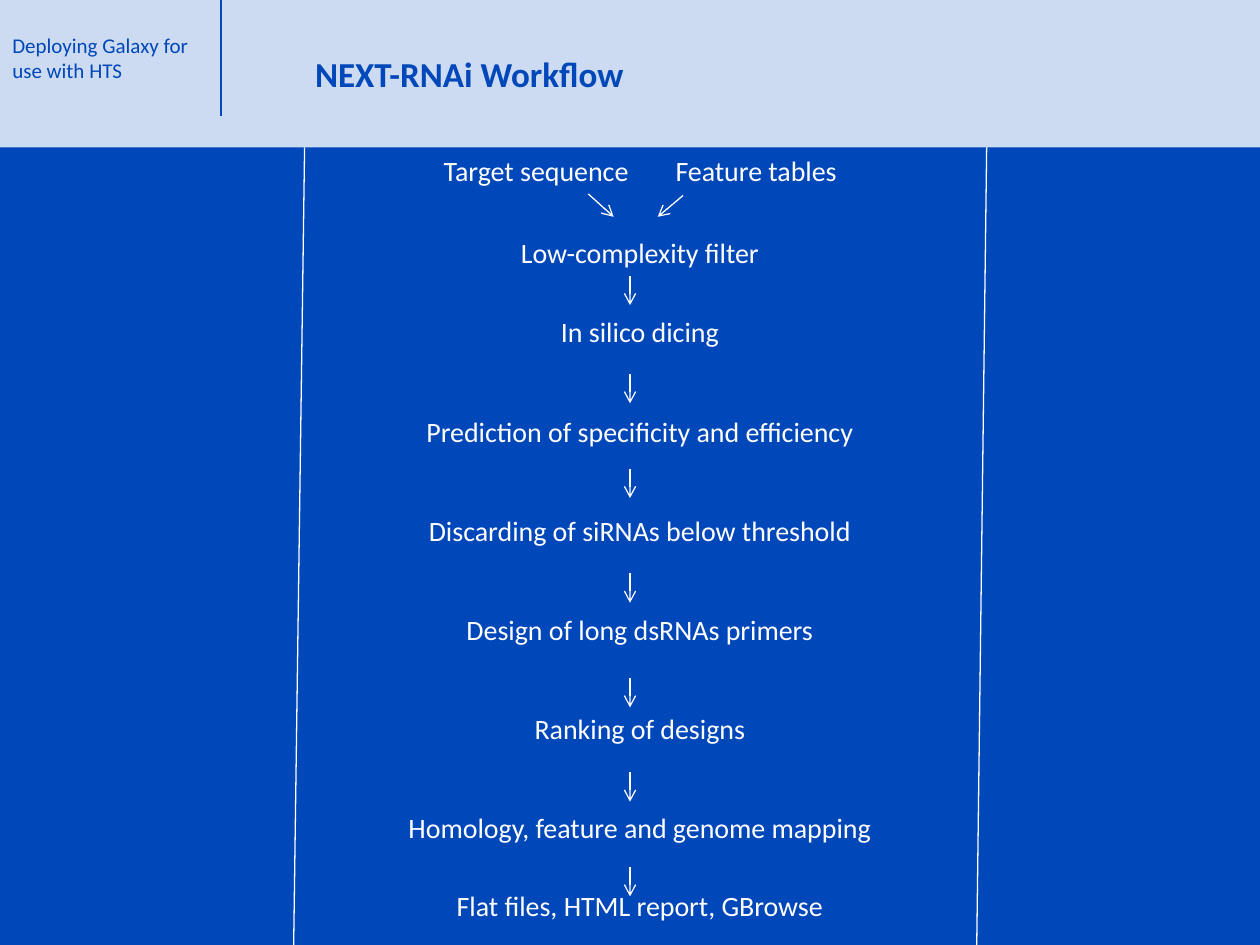
"""Build the NEXT-RNAi workflow slide."""
from pptx import Presentation
from pptx import util as u
from pptx.dml.color import RGBColor
from pptx.enum import shapes, text
from pptx.oxml.ns import qn
from lxml import etree

BLUE, PALE, WHITE = "0047B9", "CCDBF1", "FFFFFF"
WIDTH, HEIGHT = 25.4, 19.05
BODY_TOP, HEADER_HEIGHT = 2.97, 2.74
LABEL_HEIGHT, LABEL_CENTRE, LABEL_WIDTH = 0.94, 12.9, 10.16
FIRST_STEP, STEP_GAP = 6.22, 2
ARROW_X, ARROW_LENGTH = 12.7, 0.59

TITLE = "NEXT-RNAi Workflow"
SIDE_NOTE = "Deploying Galaxy for use with HTS"
INPUTS = [("Target sequence", 8.69, 4.24), ("Feature tables", 13.34, 3.81)]
FILTER, FILTER_TOP = "Low-complexity filter", 4.62
STEPS = [
    "In silico dicing",
    "Prediction of specificity and efficiency",
    "Discarding of siRNAs below threshold",
    "Design of long dsRNAs primers",
    "Ranking of designs",
    "Homology, feature and genome mapping",
]
OUTPUT, OUTPUT_TOP = "Flat files, HTML report, GBrowse", 17.78
ARROW_TOPS = [5.56, 7.54, 9.45, 11.56, 13.67, 15.57, 17.48]
INPUT_ARROWS = [(11.86, 3.91, 12.37, 4.37), (13.77, 3.94, 13.26, 4.37)]
SIDE_LINES = [(6.14, BODY_TOP, 5.92, HEIGHT), (19.89, BODY_TOP, 19.69, HEIGHT)]


def colour(value):
    return RGBColor.from_string(value)


def set_text(sp, words, size, shade, bold=False, inset=0.25, align=text.PP_ALIGN.LEFT,
             anchor=text.MSO_ANCHOR.TOP):
    tf = sp.text_frame
    tf.text = words
    frame = {"word_wrap": True, "auto_size": text.MSO_AUTO_SIZE.NONE, "vertical_anchor": anchor,
             "margin_left": u.Cm(inset), "margin_right": u.Cm(inset),
             "margin_top": u.Cm(0.13), "margin_bottom": u.Cm(0.13)}
    for name, value in frame.items():
        setattr(tf, name, value)
    p = tf.paragraphs[0]
    p.alignment = align
    font = p.runs[0].font
    for name, value in {"name": "Calibri", "size": u.Pt(size), "bold": bold}.items():
        setattr(font, name, value)
    font.color.rgb = colour(shade)


def add_label(s, words, left, top, width):
    sp = s.shapes.add_textbox(*map(u.Cm, (left, top, width, LABEL_HEIGHT)))
    set_text(sp, words, 16, WHITE, inset=0, align=text.PP_ALIGN.CENTER)


def add_band(s, top, height, shade):
    sp = s.shapes.add_shape(shapes.MSO_SHAPE.RECTANGLE, *map(u.Cm, (0, top, WIDTH, height)))
    sp.shadow.inherit = False
    sp.fill.solid()
    sp.fill.fore_color.rgb = colour(shade)
    sp.line.fill.background()


def add_line(s, ends, shade=WHITE, weight=0.75, arrow=False):
    line = s.shapes.add_connector(shapes.MSO_CONNECTOR.STRAIGHT, *map(u.Cm, ends))
    line.line.color.rgb = colour(shade)
    line.line.width = u.Pt(weight)
    if arrow:
        etree.SubElement(line.line._get_or_add_ln(), qn("a:tailEnd"), type="arrow")
    etree.SubElement(line._element.spPr, qn("a:effectLst"))


def main():
    prs = Presentation()
    prs.slide_width, prs.slide_height = u.Cm(WIDTH), u.Cm(HEIGHT)
    s = prs.slides.add_slide(prs.slide_layouts[5])
    s.background.fill.solid()
    s.background.fill.fore_color.rgb = colour(PALE)

    add_band(s, BODY_TOP, HEIGHT - BODY_TOP, BLUE)
    add_band(s, 0, HEADER_HEIGHT, PALE)
    add_line(s, (4.45, 2.33, 4.45, 0), BLUE, 0.9)
    note = s.shapes.add_textbox(*map(u.Cm, (0, 0.53, 4.24, 1.28)))
    set_text(note, SIDE_NOTE, 12, BLUE)

    title = s.shapes.title
    place = {"left": 6.1, "top": 0.92, "width": 8.36, "height": 1.11}
    for name, value in place.items():
        setattr(title, name, u.Cm(value))
    set_text(title, TITLE, 20, BLUE, bold=True, anchor=text.MSO_ANCHOR.BOTTOM)
    s.shapes._spTree.append(title._element)

    for words, left, width in INPUTS:
        add_label(s, words, left, BODY_TOP, width)
    rows = [(FILTER, FILTER_TOP)]
    rows += [(words, FIRST_STEP + i * STEP_GAP) for i, words in enumerate(STEPS)]
    rows.append((OUTPUT, OUTPUT_TOP))
    for words, top in rows:
        add_label(s, words, LABEL_CENTRE - LABEL_WIDTH / 2, top, LABEL_WIDTH)

    down = [(ARROW_X, top, ARROW_X, top + ARROW_LENGTH) for top in ARROW_TOPS]
    for ends in down + INPUT_ARROWS:
        add_line(s, ends, arrow=True)
    for ends in SIDE_LINES:
        add_line(s, ends)
    prs.save("out.pptx")


if __name__ == "__main__":
    main()
